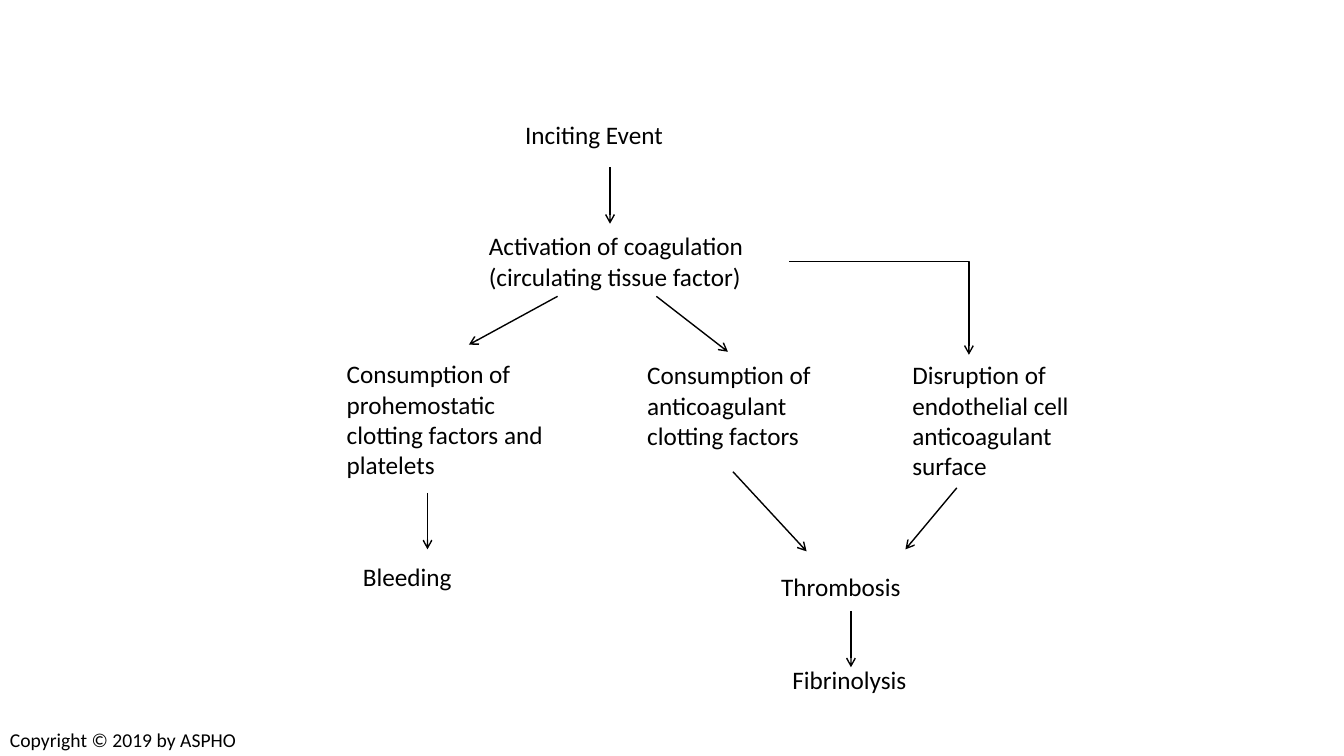
import pptx
import pptx.dml.color
import pptx.enum.shapes
import pptx.enum.text
import pptx.oxml
import pptx.oxml.ns
import pptx.util
from lxml import etree

Inches = pptx.util.Inches
CONNECTOR = pptx.enum.shapes.MSO_CONNECTOR


def rgb(value):
    return pptx.dml.color.RGBColor.from_string(value)


def add_xml(parent, tag, **attributes):
    return etree.SubElement(parent, pptx.oxml.ns.qn(tag), attributes)


class Flowchart:
    font_name = "Calibri"
    color = "000000"
    background = "FFFFFF"
    line_width = 1

    def __init__(self, prs):
        self.s = prs.slides.add_slide(prs.slide_layouts[6])
        fill = self.s.background.fill
        fill.solid()
        fill.fore_color.rgb = rgb(self.background)

    def label(self, text, left, top, width, height, size=18):
        sp = self.s.shapes.add_textbox(*map(Inches, (left, top, width, height)))
        tf = sp.text_frame
        frame_format = {
            "word_wrap": True,
            "auto_size": pptx.enum.text.MSO_AUTO_SIZE.SHAPE_TO_FIT_TEXT,
        }
        for name, value in frame_format.items():
            setattr(tf, name, value)
        r = tf.paragraphs[0].add_run()
        r.text = text
        font_format = {"name": self.font_name, "size": pptx.util.Pt(size)}
        for name, value in font_format.items():
            setattr(r.font, name, value)
        r.font.color.rgb = rgb(self.color)
        return sp

    def arrow(self, x1, y1, x2, y2, kind=CONNECTOR.STRAIGHT):
        cxn = self.s.shapes.add_connector(kind, *map(Inches, (x1, y1, x2, y2)))
        cxn.line.width = pptx.util.Pt(self.line_width)
        cxn.line.color.rgb = rgb(self.color)
        add_xml(cxn.line._get_or_add_ln(), "a:tailEnd", type="arrow")
        add_xml(cxn._element.spPr, "a:effectLst")
        return cxn

    def elbow(self, source, x1, y1, x2, y2, bend):
        cxn = self.arrow(x1, y1, x2, y2, CONNECTOR.ELBOW)
        cxn.begin_connect(source, 3)
        guides = cxn._element.spPr.find(".//" + pptx.oxml.ns.qn("a:avLst"))
        add_xml(guides, "a:gd", name="adj1", fmla=f"val {round(bend * 100000)}")
        return cxn


def main():
    prs = pptx.Presentation()
    prs.slide_width, prs.slide_height = Inches(13.33), Inches(7.5)
    chart = Flowchart(prs)

    chart.label("Inciting Event", 5.11, 1.13, 1.95, 0.4)
    activation = chart.label(
        "Activation of coagulation (circulating tissue factor)",
        4.75, 2.24, 3.08, 0.71)
    outcomes = [
        ("Consumption of prohemostatic clotting factors and platelets",
         3.34, 3.51, 2.19, 1.31),
        ("Bleeding", 3.5, 5.52, 1.61, 0.4),
        ("Consumption of anticoagulant clotting factors",
         6.32, 3.52, 2.19, 1.01),
        ("Disruption of endothelial cell anticoagulant surface",
         8.95, 3.52, 1.91, 1.31),
        ("Thrombosis", 7.65, 5.62, 1.74, 0.4),
        ("Fibrinolysis", 7.76, 6.54, 1.51, 0.4),
    ]
    for outcome in outcomes:
        chart.label(*outcome)
    chart.label("Copyright © 2019 by ASPHO", 0, 7.17, 2.48, 0.34, size=14)

    drop = 0.56
    for x, y in [(6.05, 1.66), (4.24, 4.89), (8.44, 6.06)]:
        chart.arrow(x, y, x, y + drop)
    diagonals = [
        (5.53, 2.94, 4.65, 3.42),
        (6.51, 2.94, 7.22, 3.49),
        (9.49, 4.84, 8.98, 5.45),
        (7.27, 4.68, 8, 5.47),
    ]
    for ends in diagonals:
        chart.arrow(*ends)
    chart.elbow(activation, 7.83, 2.59, 9.61, 3.52, bend=1)

    prs.save("out.pptx")


if __name__ == "__main__":
    main()
